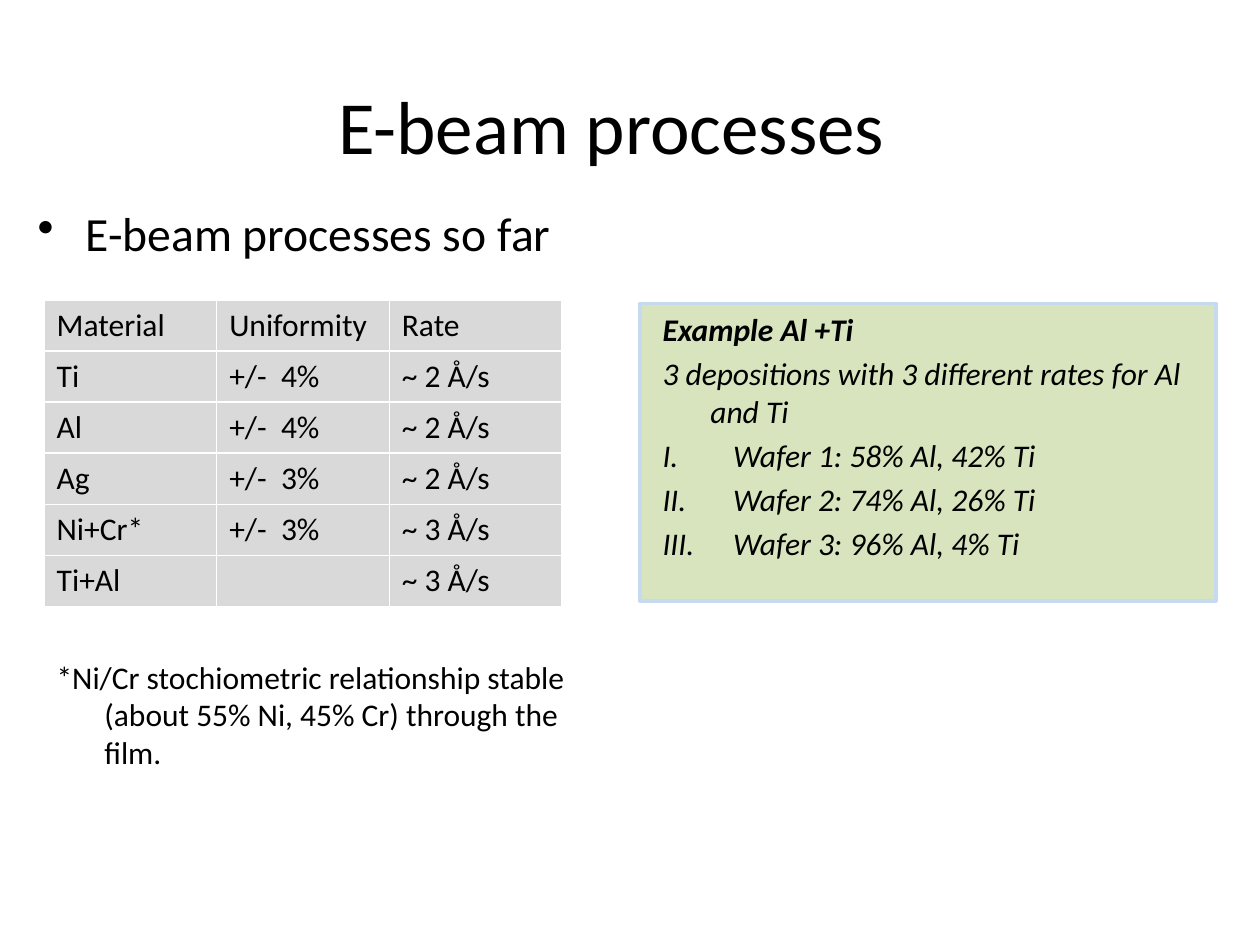
from dataclasses import dataclass
from typing import Optional

from lxml import etree
from pptx import Presentation
from pptx.dml.color import RGBColor
from pptx.enum import shapes, text
from pptx.oxml import ns
from pptx.util import Inches, Pt

COLORS = {"ink": "000000", "cell": "D9D9D9", "grid": "FFFFFF",
          "panel": "D7E4BD", "panel_edge": "C6D9F1"}
FONT = "Calibri"
BODY_SIZE = 18
ROW_HEIGHT = 0.405
COLUMN_WIDTH = 1.37


@dataclass
class Line:
    """One paragraph; bullet is an (element, attributes) pair."""
    words: str
    indent: float = 0.38
    size: float = BODY_SIZE
    bold: bool = False
    italic: bool = False
    spacing: float = 1.0
    bullet: Optional[tuple] = None


@dataclass
class Block:
    left: float
    top: float
    width: float
    height: float
    lines: list


DOT = ("a:buChar", {"char": "•"})
ROMAN = ("a:buAutoNum", {"type": "romanUcPeriod"})

RATES = [
    ("Material", "Uniformity", "Rate"),
    ("Ti", "+/-  4%", "~ 2 Å/s"),
    ("Al", "+/-  4%", "~ 2 Å/s"),
    ("Ag", "+/-  3%", "~ 2 Å/s"),
    ("Ni+Cr*", "+/-  3%", "~ 3 Å/s"),
    ("Ti+Al", "", "~ 3 Å/s"),
]
WAFERS = ["Wafer 1: 58% Al, 42% Ti", "Wafer 2: 74% Al, 26% Ti", "Wafer 3: 96% Al, 4% Ti"]

BLOCKS = [
    Block(0.2, 1.62, 4.42, 0.7,
          [Line("E-beam processes so far", size=27.2, spacing=0.9, bullet=DOT)]),
    Block(0.35, 5.17, 4.42, 1.44,
          [Line("*Ni/Cr stochiometric relationship stable (about 55% Ni, 45% Cr) "
                "through the film.")]),
    Block(5.16, 2.41, 4.42, 2.99,
          [Line("Example Al +Ti", bold=True, italic=True),
           Line("3 depositions with 3 different rates for Al and Ti", italic=True)]
          + [Line(wafer, indent=0.56, italic=True, bullet=ROMAN) for wafer in WAFERS]),
]


def rgb(name: str) -> RGBColor:
    return RGBColor.from_string(COLORS[name])


def format_font(font, size: float = BODY_SIZE, bold: bool = False, italic: bool = False) -> None:
    values = {"name": FONT, "size": Pt(size), "bold": bold, "italic": italic}
    for attribute, value in values.items():
        setattr(font, attribute, value)
    font.color.rgb = rgb("ink")


def add_title(slide, words: str) -> None:
    title = slide.shapes.title
    place = {"left": 0.35, "top": 0.36, "width": 9, "height": 1.25}
    for attribute, value in place.items():
        setattr(title, attribute, Inches(value))
    frame = title.text_frame
    frame.text = words
    frame.vertical_anchor = text.MSO_ANCHOR.MIDDLE
    frame.paragraphs[0].alignment = text.PP_ALIGN.CENTER
    format_font(frame.paragraphs[0].runs[0].font, 42.9)


def add_panel(slide) -> None:
    panel = slide.shapes.add_shape(shapes.MSO_SHAPE.RECTANGLE, Inches(5.08), Inches(2.41),
                                   Inches(4.57), Inches(2.36))
    panel.shadow.inherit = False
    panel.fill.solid()
    panel.fill.fore_color.rgb = rgb("panel")
    panel.line.color.rgb = rgb("panel_edge")
    panel.line.width = Pt(2)


def add_borders(cell) -> None:
    properties = cell._tc.get_or_add_tcPr()
    for position, side in enumerate(("a:lnL", "a:lnR", "a:lnT", "a:lnB")):
        border = etree.Element(ns.qn(side), w=str(Pt(1)))
        fill = etree.SubElement(border, ns.qn("a:solidFill"))
        etree.SubElement(fill, ns.qn("a:srgbClr"), val=COLORS["grid"])
        properties.insert(position, border)


def add_rate_table(slide) -> None:
    row_count, column_count = len(RATES), len(RATES[0])
    table = slide.shapes.add_table(
        row_count, column_count, Inches(0.35), Inches(2.38),
        Inches(COLUMN_WIDTH * column_count), Inches(ROW_HEIGHT * row_count)).table
    table.first_row = table.horz_banding = False
    for column in table.columns:
        column.width = Inches(COLUMN_WIDTH)
    for row, entries in zip(table.rows, RATES):
        row.height = Inches(ROW_HEIGHT)
        for cell, entry in zip(row.cells, entries):
            cell.text = entry
            format_font(cell.text_frame.paragraphs[0].font)
            cell.fill.solid()
            cell.fill.fore_color.rgb = rgb("cell")
            add_borders(cell)


def add_block(slide, block: Block) -> None:
    frame = slide.shapes.add_textbox(Inches(block.left), Inches(block.top),
                                     Inches(block.width), Inches(block.height)).text_frame
    frame.word_wrap = True
    for index, line in enumerate(block.lines):
        paragraph = frame.add_paragraph() if index else frame.paragraphs[0]
        paragraph.line_spacing = line.spacing
        if index:
            paragraph.space_before = Pt(0.2 * line.size)
        properties = paragraph._p.get_or_add_pPr()
        properties.set("marL", str(Inches(line.indent)))
        properties.set("indent", str(-Inches(line.indent)))
        if line.bullet:
            tag, attributes = line.bullet
            etree.SubElement(properties, ns.qn(tag), attributes)
        paragraph.text = line.words
        format_font(paragraph.font, line.size, line.bold, line.italic)
        format_font(paragraph.runs[0].font, line.size, line.bold, line.italic)


def main() -> None:
    deck = Presentation()
    deck.slide_width, deck.slide_height = Inches(10), Inches(7.5)
    slide = deck.slides.add_slide(deck.slide_layouts[5])
    add_panel(slide)
    add_rate_table(slide)
    add_title(slide, "E-beam processes")
    for block in BLOCKS:
        add_block(slide, block)
    deck.save("out.pptx")


if __name__ == "__main__":
    main()
